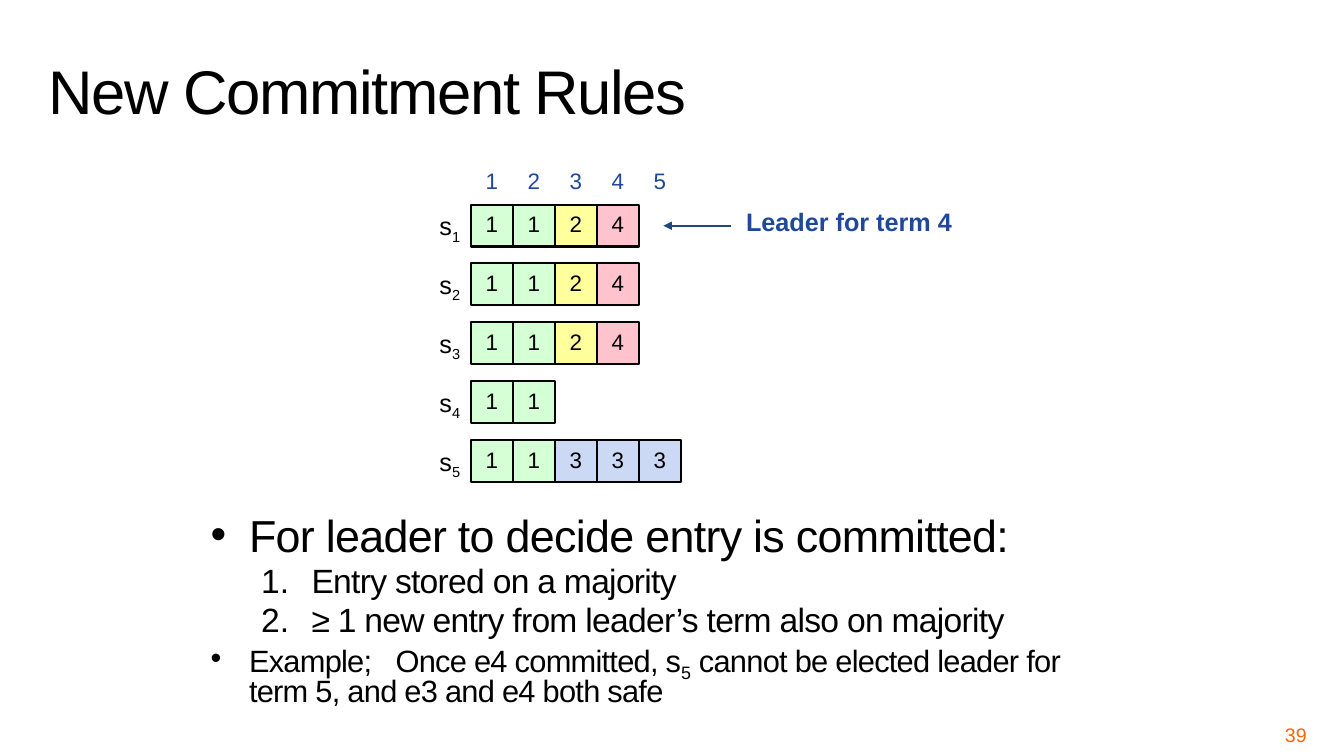
from lxml.etree import SubElement
from pptx import Presentation
from pptx.dml.color import RGBColor
from pptx.enum.shapes import MSO_CONNECTOR, MSO_SHAPE
from pptx.enum.text import MSO_ANCHOR, PP_ALIGN
from pptx.oxml.ns import qn
from pptx.util import Inches, Pt

COLORS = {
    "text": "000000",
    "index": "1F4899",
    "arrow": "1F497D",
    "number": "FF6600",
}
TERM_FILLS = {1: "D5FFD5", 2: "FFFF9B", 3: "CCD9F4", 4: "FFC3CE"}
SERVER_LOGS = [[1, 1, 2, 4], [1, 1, 2, 4], [1, 1, 2, 4], [1, 1], [1, 1, 3, 3, 3]]

GRID_LEFT, GRID_TOP = 4.67, 2.03
CELL = 5 / 12
ROW_STEP = 7 / 12


def style_run(span, size, color="text", bold=None, spacing=None, baseline=None):
    span.font.name = "Arial"
    span.font.size = Pt(size)
    span.font.bold = bold
    span.font.color.rgb = RGBColor.from_string(COLORS[color])
    properties = span._r.get_or_add_rPr()
    if spacing is not None:
        properties.set("spc", str(round(spacing * 100)))
    if baseline is not None:
        properties.set("baseline", str(baseline * 1000))


def add_run(para, text, size, **style):
    span = para.add_run()
    span.text = text
    style_run(span, size, **style)


def set_frame(frame, inset_x, inset_y, anchor):
    frame.word_wrap = True
    frame.margin_left = frame.margin_right = Inches(inset_x)
    frame.margin_top = frame.margin_bottom = Inches(inset_y)
    frame.vertical_anchor = anchor


def add_label(page, left, top, width, height, text, size, align=PP_ALIGN.LEFT,
              inset=(0, 0), anchor=MSO_ANCHOR.TOP, line_spacing=None, **style):
    box = page.shapes.add_textbox(Inches(left), Inches(top), Inches(width), Inches(height))
    set_frame(box.text_frame, *inset, anchor)
    para = box.text_frame.paragraphs[0]
    para.text = text
    para.alignment = align
    para.line_spacing = line_spacing
    style_run(para.runs[0], size, **style)
    return para


def add_entry(page, left, top, term):
    box = page.shapes.add_shape(MSO_SHAPE.RECTANGLE, Inches(left), Inches(top),
                                Inches(CELL), Inches(CELL))
    box.shadow.inherit = False
    box.fill.solid()
    box.fill.fore_color.rgb = RGBColor.from_string(TERM_FILLS[term])
    box.line.color.rgb = RGBColor.from_string(COLORS["text"])
    box.line.width = Pt(1.5)
    set_frame(box.text_frame, 0, 0, MSO_ANCHOR.MIDDLE)
    para = box.text_frame.paragraphs[0]
    para.text = str(term)
    para.alignment = PP_ALIGN.CENTER
    para.line_spacing = Pt(17)
    style_run(para.runs[0], 16)


def add_arrow(page, start_x, end_x, y):
    arrow = page.shapes.add_connector(MSO_CONNECTOR.STRAIGHT, Inches(start_x), Inches(y),
                                      Inches(end_x), Inches(y))
    arrow.line.color.rgb = RGBColor.from_string(COLORS["arrow"])
    arrow.line.width = Pt(1.5)
    SubElement(arrow.line._get_or_add_ln(), qn("a:tailEnd"), type="triangle")
    SubElement(arrow._element.spPr, qn("a:effectLst"))


def format_item(para, margin, indent, numbered=False):
    para.line_spacing = 0.8
    properties = para._p.get_or_add_pPr()
    properties.set("marL", str(Inches(margin)))
    properties.set("indent", str(Inches(indent)))
    before = SubElement(properties, qn("a:spcBef"))
    SubElement(before, qn("a:spcPct"), val="20000")
    if numbered:
        para.level = 1
        SubElement(properties, qn("a:buFont"), typeface="Arial")
        SubElement(properties, qn("a:buAutoNum"), type="arabicPeriod")
    else:
        SubElement(properties, qn("a:buFont"), typeface="Arial")
        SubElement(properties, qn("a:buChar"), char="•")


def add_rules(page):
    box = page.shapes.add_textbox(Inches(2.05), Inches(5.1), Inches(8.84), Inches(2.42))
    frame = box.text_frame
    set_frame(frame, 0.04, 0.04, MSO_ANCHOR.TOP)

    heading = frame.paragraphs[0]
    format_item(heading, 0.38, -0.38)
    add_run(heading, "For leader to decide entry is committed:", 32, spacing=-0.5)

    for rule in ("Entry stored on a majority",
                 "≥ 1 new entry from leader’s term also on majority"):
        para = frame.add_paragraph()
        format_item(para, 1, -0.5, numbered=True)
        add_run(para, rule, 24, spacing=-0.5)

    # The single space after "Example;" is widened by letter spacing
    example = frame.add_paragraph()
    format_item(example, 0.38, -0.38)
    add_run(example, "Example;", 22, spacing=-0.5)
    add_run(example, " ", 22, spacing=10.7)
    add_run(example, "Once e4 committed, s", 22, spacing=-0.5)
    add_run(example, "5", 22, spacing=-0.5, baseline=-25)
    add_run(example, " cannot be elected leader for term 5, and e3 and e4 both safe",
            22, spacing=-0.5)


def add_logs(page):
    # Log indexes
    for column in range(5):
        add_label(page, GRID_LEFT + column * CELL, 1.61, CELL, 0.37, str(column + 1), 16,
                  align=PP_ALIGN.CENTER, inset=(0.1, 0.05), color="index")

    # One row of entries per server
    for row, terms in enumerate(SERVER_LOGS):
        top = GRID_TOP + row * ROW_STEP
        name = add_label(page, GRID_LEFT - CELL, top + 0.06, CELL, 0.3, "s", 18,
                         align=PP_ALIGN.CENTER)
        add_run(name, str(row + 1), 18, baseline=-25)
        for column, term in enumerate(terms):
            add_entry(page, GRID_LEFT + column * CELL, top, term)


def main():
    deck = Presentation()
    deck.slide_width, deck.slide_height = Inches(13.33), Inches(7.5)
    page = deck.slides.add_slide(deck.slide_layouts[6])

    # Title and page number
    add_label(page, 0.38, 0.13, 12.62, 1.17, "New Commitment Rules", 44,
              inset=(0.1, 0.05), anchor=MSO_ANCHOR.BOTTOM, line_spacing=0.8, spacing=-1)
    add_label(page, 9.89, 7.17, 3.11, 0.23, "39", 14, align=PP_ALIGN.RIGHT,
              inset=(0.04, 0.04), anchor=MSO_ANCHOR.MIDDLE, color="number")

    # Server logs with the leader marked
    add_logs(page)
    add_arrow(page, 7.25, 6.58, 2.24)
    add_label(page, 7.4, 2.08, 2.17, 0.27, "Leader for term 4", 18,
              line_spacing=Pt(19), color="index", bold=True)

    # Commitment rules
    add_rules(page)
    deck.save("out.pptx")


if __name__ == "__main__":
    main()
